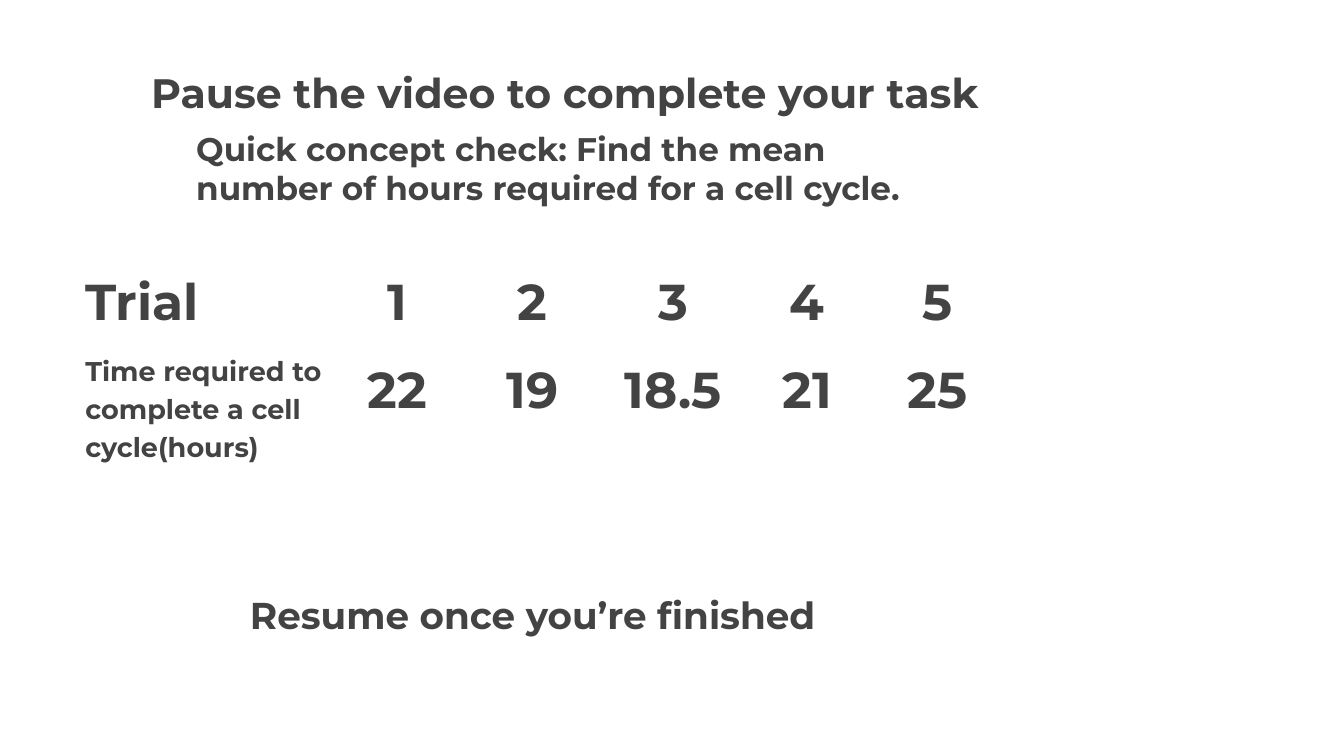
from dataclasses import dataclass

from lxml import etree
from pptx import Presentation
from pptx.dml.color import RGBColor
from pptx.enum import shapes, text
from pptx.oxml import ns
from pptx.util import Inches, Pt


@dataclass(frozen=True)
class Theme:
    font: str = "Montserrat"
    ink: str = "434343"
    paper: str = "FFFFFF"
    title: int = 44
    close: int = 40
    task: int = 35
    value: int = 54
    label: int = 29
    leading: float = 1.15
    rule: float = 2.25


THEME = Theme()
TRIALS = [
    ["Trial", "1", "2", "3", "4", "5"],
    ["Time required to complete a cell cycle(hours)",
     "22", "19", "18.5", "21", "25"],
]
WIDTHS = [3.8, 1.82, 2.21, 1.98, 2.01, 1.86]
HEIGHTS = [1.31, 2.45]


def write(frame, words, size, pad=(0, 0), align=text.PP_ALIGN.LEFT,
          leading=THEME.leading):
    frame.word_wrap = True
    frame.vertical_anchor = text.MSO_ANCHOR.TOP
    frame.margin_left = frame.margin_right = Inches(pad[0])
    frame.margin_top = frame.margin_bottom = Inches(pad[1])
    para = frame.paragraphs[0]
    para.alignment = align
    para.line_spacing = leading
    run = para.add_run()
    run.text = words
    font = run.font
    font.name, font.size, font.bold = THEME.font, Pt(size), True
    font.color.rgb = RGBColor.from_string(THEME.ink)


def add_line(slide, box, words, size):
    """Place one line of bare text."""
    label = slide.shapes.add_textbox(*map(Inches, box))
    write(label.text_frame, words, size)


def add_task(slide, box, words):
    panel = slide.shapes.add_shape(
        shapes.MSO_SHAPE.RECTANGLE, *map(Inches, box))
    panel.shadow.inherit = False
    paper = RGBColor.from_string(THEME.paper)
    panel.fill.solid()
    panel.fill.fore_color.rgb = paper
    panel.line.color.rgb = paper
    panel.line.width = Pt(0.75)
    write(panel.text_frame, words, THEME.task, (0.2, 0.1), leading=1.0)


def add_rules(cell):
    """Draw all four borders of a cell."""
    props = cell._tc.get_or_add_tcPr()
    for at, side in enumerate(("lnL", "lnR", "lnT", "lnB")):
        line = etree.Element(ns.qn(f"a:{side}"), w=str(Pt(THEME.rule)))
        fill = etree.SubElement(line, ns.qn("a:solidFill"))
        etree.SubElement(fill, ns.qn("a:srgbClr"), val=THEME.paper)
        props.insert(at, line)


def add_trials(slide, left, top):
    grid = slide.shapes.add_table(
        len(HEIGHTS), len(WIDTHS), Inches(left), Inches(top),
        Inches(sum(WIDTHS)), Inches(sum(HEIGHTS))).table
    grid.first_row = grid.horz_banding = False
    for col, width in zip(grid.columns, WIDTHS):
        col.width = Inches(width)
    for r, (row, height) in enumerate(zip(grid.rows, HEIGHTS)):
        row.height = Inches(height)
        for c, cell in enumerate(row.cells):
            cell.fill.background()
            add_rules(cell)
            cell.margin_left = cell.margin_right = Inches(0.07)
            cell.margin_top = cell.margin_bottom = Inches(0.1)
            size = THEME.label if (r, c) == (1, 0) else THEME.value
            align = text.PP_ALIGN.CENTER if c else text.PP_ALIGN.LEFT
            write(cell.text_frame, TRIALS[r][c], size, (0.07, 0.1), align)


def main():
    deck = Presentation()
    deck.slide_width, deck.slide_height = Inches(20), Inches(11.25)
    slide = deck.slides.add_slide(deck.slide_layouts[6])
    add_line(slide, (2.25, 0.9, 15.94, 1.88),
             "Pause the video to complete your task", THEME.title)
    add_line(slide, (3.72, 8.72, 9.12, 0.93),
             "Resume once you’re finished", THEME.close)
    add_task(slide, (2.72, 1.82, 11.64, 1.68),
             "Quick concept check: Find the mean number of hours "
             "required for a cell cycle.")
    add_trials(slide, 1.2, 3.8)
    deck.save("out.pptx")


if __name__ == "__main__":
    main()
